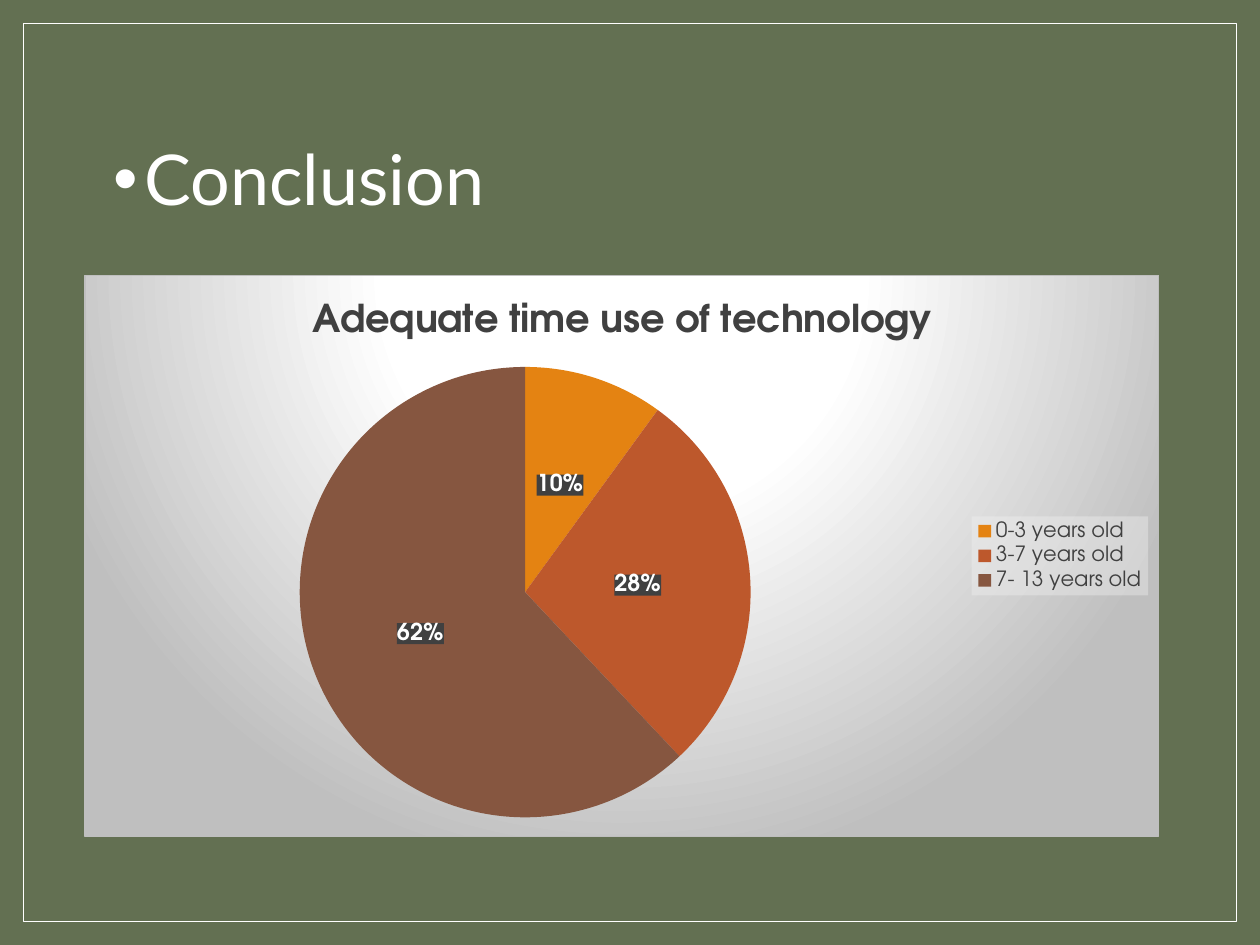
from collections import namedtuple

from lxml import etree
from pptx import Presentation
from pptx.chart.data import CategoryChartData
from pptx.dml.color import RGBColor
from pptx.enum.chart import XL_CHART_TYPE, XL_LABEL_POSITION, XL_LEGEND_POSITION
from pptx.enum.shapes import MSO_SHAPE
from pptx.enum.text import MSO_ANCHOR
from pptx.oxml import parse_xml
from pptx.oxml.ns import nsdecls, qn
from pptx.util import Cm, Pt

PIE = XL_CHART_TYPE.PIE
LABEL_CENTER = XL_LABEL_POSITION.CENTER
LEGEND_RIGHT = XL_LEGEND_POSITION.RIGHT
RECTANGLE = MSO_SHAPE.RECTANGLE
MIDDLE = MSO_ANCHOR.MIDDLE

Box = namedtuple("Box", "left top width height")

GREEN, WHITE, DARK, SILVER = "637052", "FFFFFF", "404040", "BFBFBF"
TITLE_FONT, CHART_FONT = "Lato", "TeX Gyre Adventor"
CHART_TITLE = "Adequate time use of technology"
AGE_GROUPS = [
    ("0-3 years old", 10, "E48312"),
    ("3-7 years old", 28, "BD582C"),
    ("7- 13 years old", 62, "865640"),
]


def rgb(code):
    """Return the colour for a hex string."""
    return RGBColor.from_string(code)


def lengths(box):
    """Return the sides of a box as centimetre lengths."""
    return [Cm(side) for side in box]


def style(font, name, size, color, bold=False):
    """Set the look of a font."""
    font.name, font.size, font.bold = name, Pt(size), bold
    font.color.rgb = rgb(color)


def chart_fill(inner):
    """Return chart shape properties holding the given fill and line XML."""
    return parse_xml(f'<c:spPr {nsdecls("c", "a")}>{inner}</c:spPr>')


def translucent(color, percent):
    """Return shape properties with a partly transparent fill."""
    return chart_fill(
        f'<a:solidFill><a:srgbClr val="{color}"><a:alpha val="{percent * 1000}"/>'
        "</a:srgbClr></a:solidFill><a:ln><a:noFill/></a:ln>"
    )


def add_frame(slide, box):
    """Draw the thin border around the slide."""
    frame = slide.shapes.add_shape(RECTANGLE, *lengths(box))
    frame.shadow.inherit = False
    frame.fill.background()
    frame.line.color.rgb = rgb(WHITE)
    frame.line.width = Pt(0.5)


def add_heading(slide, box, wording):
    """Write the bulleted heading in the middle of its box."""
    text = slide.shapes.add_textbox(*lengths(box)).text_frame
    text.word_wrap = True
    text.vertical_anchor = MIDDLE
    heading = text.paragraphs[0]
    properties = heading._p.get_or_add_pPr()
    properties.set("marL", str(Cm(0.64)))
    properties.set("indent", str(-Cm(0.64)))
    etree.SubElement(properties, qn("a:buFont")).set("typeface", "Arial")
    etree.SubElement(properties, qn("a:buChar")).set("char", "•")
    heading.line_spacing = 0.9
    run = heading.add_run()
    run.text = wording
    style(run.font, TITLE_FONT, 40, WHITE)


def paint_chart_area(chart):
    """Give the chart area its radial gradient and border."""
    stops = "".join(
        f'<a:gs pos="{position * 1000}"><a:srgbClr val="{color}"/></a:gs>'
        for position, color in [(0, WHITE), (39, WHITE), (100, SILVER)]
    )
    area = chart_fill(
        f'<a:gradFill><a:gsLst>{stops}</a:gsLst><a:path path="circle">'
        '<a:fillToRect l="50000" t="-80000" r="50000" b="180000"/></a:path></a:gradFill>'
        f'<a:ln w="{Pt(0.75)}"><a:solidFill><a:srgbClr val="{SILVER}"/></a:solidFill></a:ln>'
    )
    chart._chartSpace.find(qn("c:chart")).addnext(area)


def place_pie(chart, box):
    """Fix the plot area at fractions of the chart's size."""
    plot_area = chart._chartSpace.find(qn("c:chart")).find(qn("c:plotArea"))
    for old in plot_area.findall(qn("c:layout")):
        plot_area.remove(old)
    sides = "".join(f'<c:{key} val="{value}"/>' for key, value in zip("xywh", box))
    plot_area.insert(0, parse_xml(
        f'<c:layout {nsdecls("c")}><c:manualLayout><c:layoutTarget val="inner"/>'
        f'<c:xMode val="edge"/><c:yMode val="edge"/>{sides}</c:manualLayout></c:layout>'
    ))


def add_age_chart(slide, box):
    """Add the pie chart of technology time by age group."""
    shares = CategoryChartData()
    shares.categories = [name for name, _, _ in AGE_GROUPS]
    shares.add_series(CHART_TITLE, [share for _, share, _ in AGE_GROUPS])
    chart = slide.shapes.add_chart(PIE, *lengths(box), shares).chart
    style(chart.font, CHART_FONT, 10, WHITE)
    paint_chart_area(chart)
    place_pie(chart, Box(0.2, 0.16, 0.42, 0.81))

    title = chart.chart_title.text_frame.paragraphs[0].add_run()
    title.text = CHART_TITLE
    style(title.font, CHART_FONT, 22, DARK, bold=True)
    chart.chart_title.include_in_layout = False

    chart.has_legend = True
    legend = chart.legend
    legend.position = LEGEND_RIGHT
    legend.include_in_layout = False
    style(legend.font, CHART_FONT, 12, DARK)
    legend._element.find(qn("c:txPr")).addprevious(translucent("F2F2F2", 39))

    plot = chart.plots[0]
    plot.vary_by_categories = True
    ages = plot.series[0]
    for index, (_, _, color) in enumerate(AGE_GROUPS):
        wedge = ages.points[index].format
        wedge.fill.solid()
        wedge.fill.fore_color.rgb = rgb(color)
        wedge.line.fill.background()

    labels = ages.data_labels
    labels.show_percentage = True
    labels.show_value = False
    labels.number_format = "0%"
    labels.number_format_is_linked = False
    labels.position = LABEL_CENTER
    style(labels.font, CHART_FONT, 13.3, WHITE, bold=True)
    labels._element.find(qn("c:txPr")).addprevious(translucent(DARK, 85))


def main():
    """Build and save the conclusion slide."""
    deck = Presentation()
    deck.slide_width, deck.slide_height = Cm(25.4), Cm(19.05)
    slide = deck.slides.add_slide(deck.slide_layouts[6])
    slide.background.fill.solid()
    slide.background.fill.fore_color.rgb = rgb(GREEN)
    add_frame(slide, Box(0.48, 0.48, 24.44, 18.09))
    add_heading(slide, Box(2.03, 1.78, 21.34, 3.81), "Conclusion")
    add_age_chart(slide, Box(1.7, 5.54, 21.67, 11.33))
    deck.save("out.pptx")


if __name__ == "__main__":
    main()
